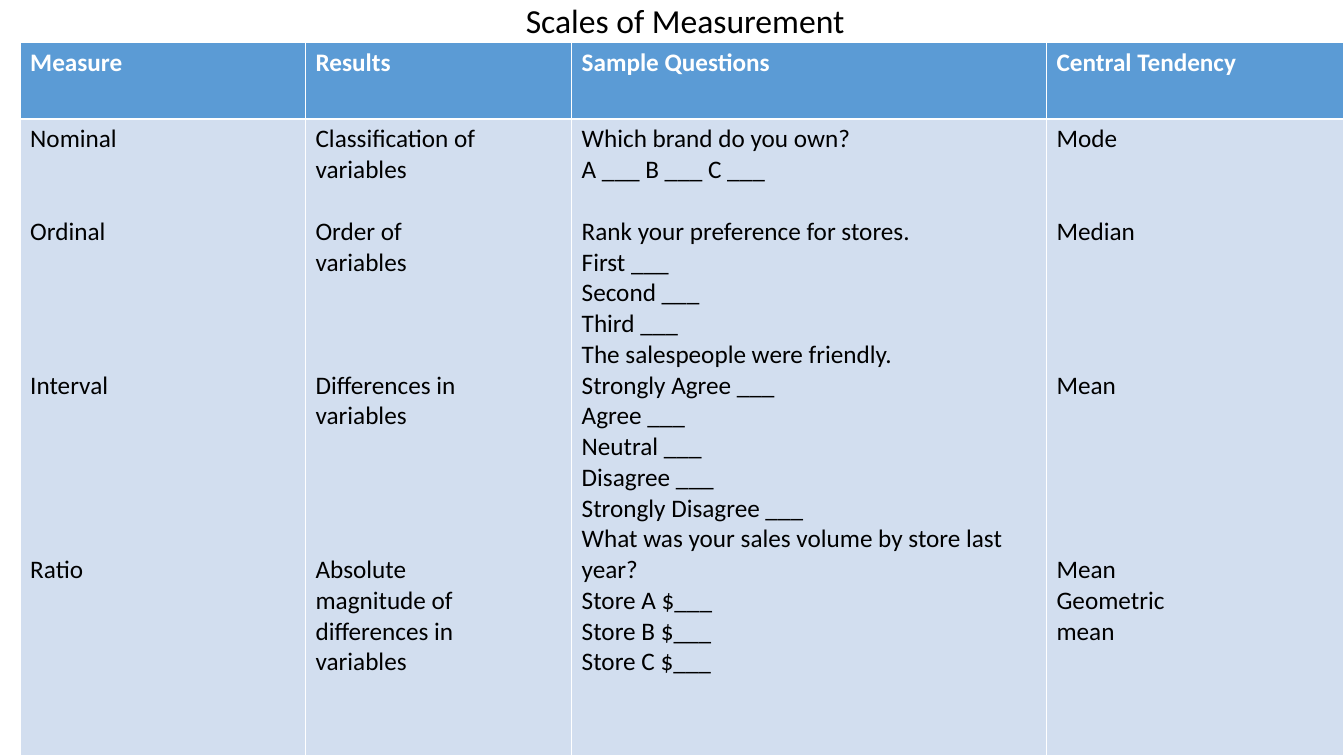
from lxml import etree
from pptx import Presentation
from pptx.dml.color import RGBColor
from pptx.enum.text import MSO_ANCHOR, PP_ALIGN
from pptx.oxml.ns import qn
from pptx.util import Inches, Pt

LEFT, CENTER = PP_ALIGN.LEFT, PP_ALIGN.CENTER
TOP = MSO_ANCHOR.TOP
WHITE = RGBColor(0xFF, 0xFF, 0xFF)
BLACK = RGBColor(0, 0, 0)
BLUE = RGBColor(0x5B, 0x9B, 0xD5)
PALE = RGBColor(0xD2, 0xDE, 0xEF)

FONT = "Calibri"
PITCH = 21.97  # height in points of one 18 pt line

WIDTHS = [2.83, 2.64, 4.71, 2.95]
HEIGHTS = [0.76, 6.32]
HEADS = ["Measure", "Results", "Sample Questions", "Central Tendency"]

# Each column is a list of blocks: (free lines above the block, its lines)
BLOCKS = [
    [(0, ["Nominal"]), (2, ["Ordinal"]), (4, ["Interval"]), (5, ["Ratio"])],
    [
        (0, ["Classification of", "variables"]),
        (1, ["Order of", "variables"]),
        (3, ["Differences in", "variables"]),
        (4, ["Absolute", "magnitude of", "differences in", "variables"]),
    ],
    [
        (0, ["Which brand do you own?", "A ___ B ___ C ___"]),
        (1, ["Rank your preference for stores.", "First ___", "Second ___",
             "Third ___"]),
        (0, ["The salespeople were friendly.", "Strongly Agree ___",
             "Agree ___", "Neutral ___", "Disagree ___",
             "Strongly Disagree ___"]),
        (0, ["What was your sales volume by store last year?",
             "Store A $___", "Store B $___", "Store C $___"]),
    ],
    [(0, ["Mode"]), (2, ["Median"]), (4, ["Mean"]),
     (5, ["Mean", "Geometric", "mean"])],
]


def write(frame, blocks, size=18, color=BLACK, bold=False, align=LEFT,
          spacing=1.0):
    """Fill a text frame with blocks of lines, set apart by paragraph spacing."""
    frame.word_wrap = True
    frame.vertical_anchor = TOP
    para = frame.paragraphs[0]
    first = True
    for gap, lines in blocks:
        for i, line in enumerate(lines):
            if not first:
                para = frame.add_paragraph()
            first = False
            para.alignment = align
            para.line_spacing = spacing
            para.space_before = Pt(gap * PITCH if i == 0 else 0)
            run = para.add_run()
            run.text = line
            run.font.name = FONT
            run.font.size = Pt(size)
            run.font.bold = bold
            run.font.color.rgb = color


def paint(cell, color):
    """Give a cell thin white borders and a solid fill."""
    props = cell._tc.get_or_add_tcPr()
    for side in ("a:lnL", "a:lnR", "a:lnT", "a:lnB"):
        line = etree.SubElement(props, qn(side), w=str(Pt(1)))
        fill = etree.SubElement(line, qn("a:solidFill"))
        etree.SubElement(fill, qn("a:srgbClr"), val=str(WHITE))
    cell.fill.solid()
    cell.fill.fore_color.rgb = color


def add_title(slide, x, y, w, h):
    box = slide.shapes.add_textbox(Inches(x), Inches(y), Inches(w), Inches(h))
    write(box.text_frame, [(0, ["Scales of Measurement"])], size=24,
          align=CENTER, spacing=0.9)


def add_scales(slide, x, y, w, h):
    table = slide.shapes.add_table(
        len(HEIGHTS), len(WIDTHS), Inches(x), Inches(y), Inches(w), Inches(h)
    ).table
    for row, part in zip(table.rows, HEIGHTS):
        row.height = Inches(h * part / sum(HEIGHTS))
    for i, part in enumerate(WIDTHS):
        table.columns[i].width = Inches(w * part / sum(WIDTHS))
        head, body = table.cell(0, i), table.cell(1, i)
        paint(head, BLUE)
        write(head.text_frame, [(0, [HEADS[i]])], color=WHITE, bold=True)
        paint(body, PALE)
        write(body.text_frame, BLOCKS[i])


def main():
    deck = Presentation()
    deck.slide_width, deck.slide_height = Inches(13.33), Inches(7.5)
    slide = deck.slides.add_slide(deck.slide_layouts[6])
    add_title(slide, 1.92, 0, 9.75, 7.17)
    add_scales(slide, 0.2, 0.42, 13.13, 7.08)
    deck.save("out.pptx")


if __name__ == "__main__":
    main()
